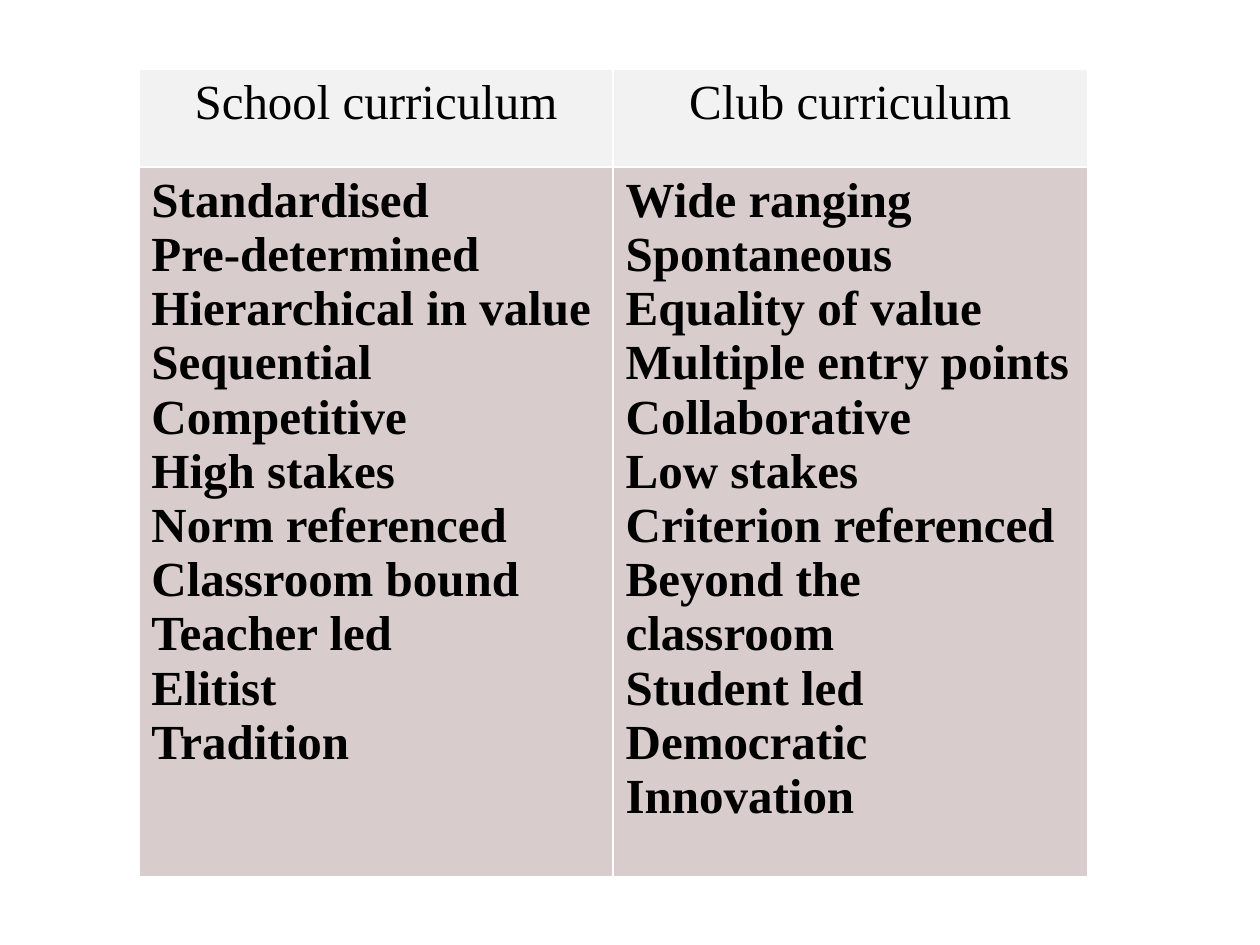
from dataclasses import dataclass

from lxml.etree import SubElement
from pptx import Presentation
from pptx.dml.color import RGBColor
from pptx.enum.text import PP_ALIGN as Align
from pptx.oxml.ns import qn
from pptx.util import Cm, Pt

COLOURS = {"text": "000000", "header": "F2F2F2", "body": "D9CCCC", "border": "FFFFFF"}

CURRICULA = {
    "School curriculum": [
        "Standardised", "Pre-determined", "Hierarchical in value", "Sequential",
        "Competitive", "High stakes", "Norm referenced", "Classroom bound",
        "Teacher led", "Elitist", "Tradition",
    ],
    "Club curriculum": [
        "Wide ranging", "Spontaneous", "Equality of value", "Multiple entry points",
        "Collaborative", "Low stakes", "Criterion referenced", "Beyond the classroom",
        "Student led", "Democratic", "Innovation",
    ],
}


@dataclass
class TablePage:
    """Holds the text style and the current slide."""

    page: object
    font_name: str = "Times New Roman"
    font_size: int = 28

    def border(self, cell, width=1):
        properties = cell._tc.get_or_add_tcPr()
        for side in ("lnL", "lnR", "lnT", "lnB"):
            line = SubElement(properties, qn(f"a:{side}"), w=str(Pt(width)))
            fill = SubElement(line, qn("a:solidFill"))
            SubElement(fill, qn("a:srgbClr"), val=COLOURS["border"])

    def cell(self, cell, lines, colour, bold, align):
        self.border(cell)
        cell.fill.solid()
        cell.fill.fore_color.rgb = RGBColor.from_string(COLOURS[colour])
        cell.text = "\n".join(lines)
        for para in cell.text_frame.paragraphs:
            para.alignment = align
            para.font.name = self.font_name
            para.font.size = Pt(self.font_size)
            para.font.bold = bold
            para.font.color.rgb = RGBColor.from_string(COLOURS["text"])

    def table(self, columns, left, top, width, heights):
        frame = self.page.shapes.add_table(
            len(heights), len(columns), left, top, width, sum(heights))
        table = frame.table
        for row, height in zip(table.rows, heights):
            row.height = height
        for index, (heading, traits) in enumerate(columns.items()):
            self.cell(table.cell(0, index), [heading], "header", False, Align.CENTER)
            self.cell(table.cell(1, index), traits, "body", True, Align.LEFT)


def main():
    deck = Presentation()
    deck.slide_width, deck.slide_height = Cm(25.4), Cm(19.05)
    comparison = TablePage(deck.slides.add_slide(deck.slide_layouts[6]))
    comparison.table(CURRICULA, Cm(2.8), Cm(1.4), Cm(19.12), [Cm(1.97), Cm(14.3)])
    deck.save("out.pptx")


if __name__ == "__main__":
    main()
